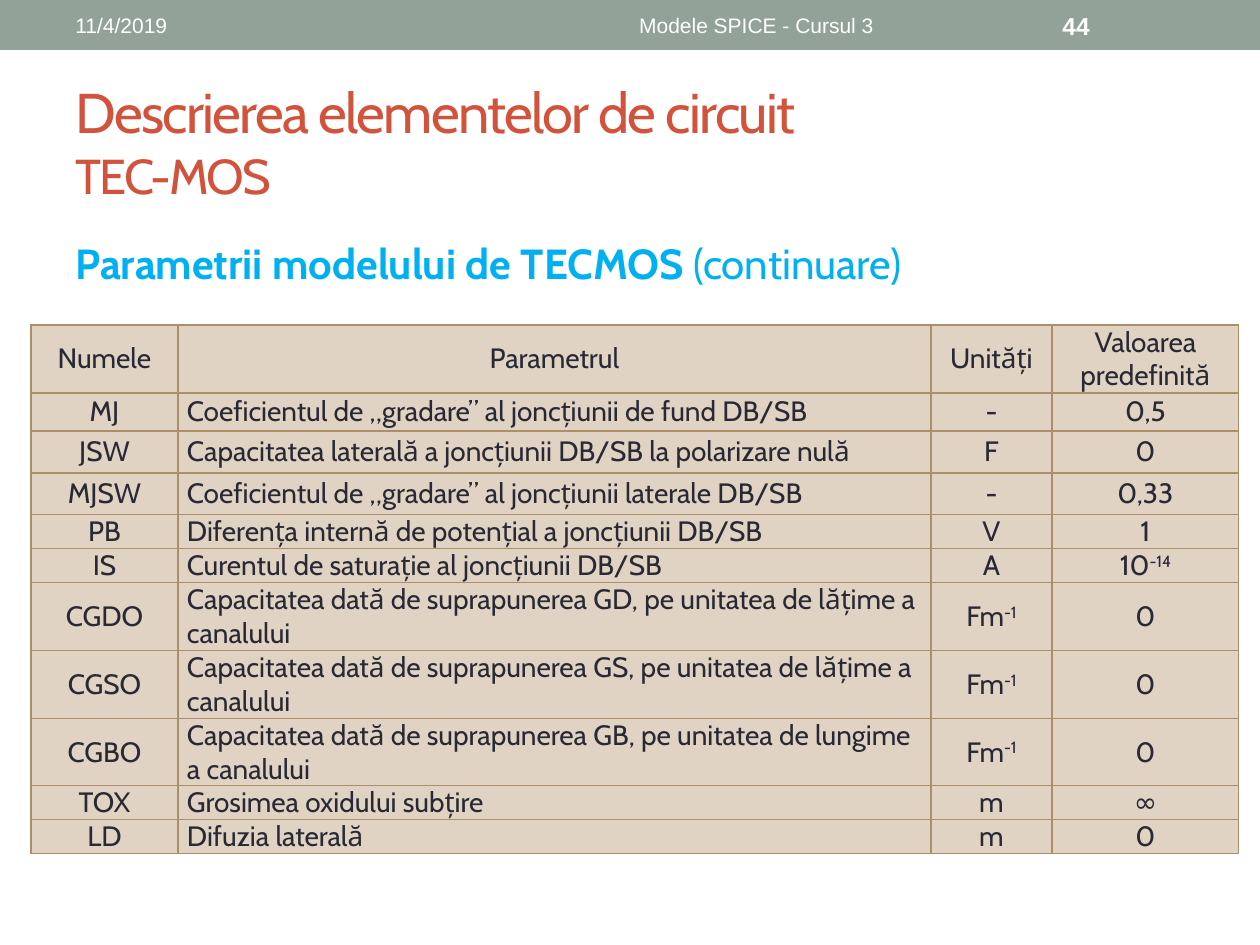
from dataclasses import dataclass
from pptx import Presentation
from pptx.dml.color import RGBColor
from pptx.enum.shapes import MSO_SHAPE
from pptx.enum.text import MSO_ANCHOR as ANCHOR, MSO_AUTO_SIZE as AUTO, PP_ALIGN as ALIGN
from pptx.oxml import parse_xml
from pptx.oxml.ns import nsdecls
from pptx.util import Emu, Pt


@dataclass(frozen=True)
class Theme:
    """Colours, fonts and type sizes of the slide."""
    band: str = "93A299"
    white: str = "FFFFFF"
    title: str = "D2533C"
    accent: str = "00B0F0"
    ink: str = "292934"
    cell: str = "E0D3C4"
    border: str = "AD8F67"
    font: str = "Cabin"
    band_font: str = "Arial"
    title_size: int = 32
    subtitle_size: int = 28
    body_size: int = 24
    cell_size: int = 16
    band_size: int = 12
    number_size: int = 14


T = Theme()
COLUMNS = [147, 753, 121, 187]
HEIGHTS = [68, 38, 42, 42, 33, 34, 68, 68, 67, 34, 34]
ROWS = [
    ("Numele", "Parametrul", "Unități", "Valoarea predefinită"),
    ("MJ", "Coeficientul de „gradare” al joncțiunii de fund DB/SB", "-", "0,5"),
    ("JSW", "Capacitatea laterală a joncțiunii DB/SB la polarizare nulă", "F", "0"),
    ("MJSW", "Coeficientul de „gradare” al joncțiunii laterale DB/SB", "-", "0,33"),
    ("PB", "Diferența internă de potențial a joncțiunii DB/SB", "V", "1"),
    ("IS", "Curentul de saturație al joncțiunii DB/SB", "A", "10^-14"),
    ("CGDO", "Capacitatea dată de suprapunerea GD, pe unitatea de lățime a canalului", "Fm^-1", "0"),
    ("CGSO", "Capacitatea dată de suprapunerea GS, pe unitatea de lățime a canalului", "Fm^-1", "0"),
    ("CGBO", "Capacitatea dată de suprapunerea GB, pe unitatea de lungime a canalului", "Fm^-1", "0"),
    ("TOX", "Grosimea oxidului subțire", "m", "∞"),
    ("LD", "Difuzia laterală", "m", "0"),
]


def px(n):
    """Turn pixels into EMU."""
    return Emu(round(n * 914400 / 126))


def rgb(color):
    """Turn a hex string into a colour."""
    return RGBColor.from_string(color)


def style(r, size, color, font=T.font, bold=False):
    """Format one run."""
    r.font.size, r.font.name, r.font.bold = Pt(size), font, bold
    r.font.color.rgb = rgb(color)


def place(s, x, y, w, h):
    """Move a shape to a box."""
    s.left, s.top, s.width, s.height = px(x), px(y), px(w), px(h)


def add_band(sl, x, y, w, h):
    """Draw the top band with date, course name and slide number."""
    s = sl.shapes.add_shape(MSO_SHAPE.RECTANGLE, px(x), px(y), px(w), px(h))
    s.shadow.inherit = False
    s.fill.solid()
    s.fill.fore_color.rgb = rgb(T.band)
    s.line.fill.background()
    labels = [
        (63, 399, "11/4/2019", ALIGN.LEFT, T.band_size, False),
        (473, 567, "Modele SPICE - Cursul 3", ALIGN.CENTER, T.band_size, False),
        (1050, 147, "44", ALIGN.LEFT, T.number_size, True),
    ]
    for left, width, text, align, size, bold in labels:
        tf = sl.shapes.add_textbox(px(x + left), px(y + 3), px(width), px(h - 5)).text_frame
        tf.word_wrap, tf.vertical_anchor = True, ANCHOR.MIDDLE
        p = tf.paragraphs[0]
        p.text, p.alignment = text, align
        style(p.runs[0], size, T.white, T.band_font, bold)


def fill_title(s, x, y, w, h):
    """Write the two-line title into its placeholder."""
    place(s, x, y, w, h)
    tf = s.text_frame
    tf.text = "Descrierea elementelor de circuit\vTEC-MOS"
    tf.vertical_anchor, tf.auto_size = ANCHOR.MIDDLE, AUTO.NONE
    p = tf.paragraphs[0]
    p.alignment = ALIGN.LEFT
    for r, size in zip(p.runs, (T.title_size, T.subtitle_size)):
        style(r, size, T.title)
        r.font._element.set("spc", "-100")


def fill_heading(s, x, y, w, h):
    """Write the unbulleted heading into the body placeholder."""
    place(s, x, y, w, h)
    tf = s.text_frame
    tf.auto_size = AUTO.NONE
    p = tf.paragraphs[0]
    for text, bold in (("Parametrii modelului de TECMOS", True), (" (continuare)", False)):
        r = p.add_run()
        r.text = text
        style(r, T.body_size, T.accent, bold=bold)
    pPr = p._p.get_or_add_pPr()
    pPr.set("marL", str(px(25)))
    pPr.set("indent", str(px(-25)))
    pPr.append(parse_xml(f"<a:buNone {nsdecls('a')}/>"))


def fill_cell(cell, text, align):
    """Write one cell; text after ^ is superscript."""
    cell.margin_left = cell.margin_right = px(9)
    cell.margin_top = cell.margin_bottom = 0
    cell.vertical_anchor = ANCHOR.MIDDLE
    p = cell.text_frame.paragraphs[0]
    p.alignment = align
    for i, part in enumerate(text.split("^")):
        r = p.add_run()
        r.text = part
        style(r, T.cell_size, T.ink)
        if i:
            r.font._element.set("baseline", "30000")
    tcPr = cell._tc.get_or_add_tcPr()
    for side in ("lnL", "lnR", "lnT", "lnB"):
        tcPr.append(parse_xml(
            f'<a:{side} {nsdecls("a")} w="{Pt(0.75)}"><a:solidFill>'
            f'<a:srgbClr val="{T.border}"/></a:solidFill></a:{side}>'))
    cell.fill.solid()
    cell.fill.fore_color.rgb = rgb(T.cell)


def add_parameters(sl, x, y):
    """Build the table of model parameters."""
    table = sl.shapes.add_table(len(ROWS), len(COLUMNS), px(x), px(y),
                                px(sum(COLUMNS)), px(sum(HEIGHTS))).table
    table.first_row = table.horz_banding = False
    for column, width in zip(table.columns, COLUMNS):
        column.width = px(width)
    for i, (row, height, texts) in enumerate(zip(table.rows, HEIGHTS, ROWS)):
        row.height = px(height)
        for j, (cell, text) in enumerate(zip(row.cells, texts)):
            fill_cell(cell, text, ALIGN.LEFT if i and j == 1 else ALIGN.CENTER)


def main():
    """Build and save the slide."""
    prs = Presentation()
    prs.slide_width, prs.slide_height = px(1260), px(945)
    sl = prs.slides.add_slide(prs.slide_layouts[1])
    add_band(sl, 0, 0, 1260, 50)
    fill_title(sl.shapes.title, 63, 73, 1134, 136)
    fill_heading(sl.placeholders[1], 63, 231, 1134, 63)
    add_parameters(sl, 31, 325)
    prs.save("out.pptx")


if __name__ == "__main__":
    main()
